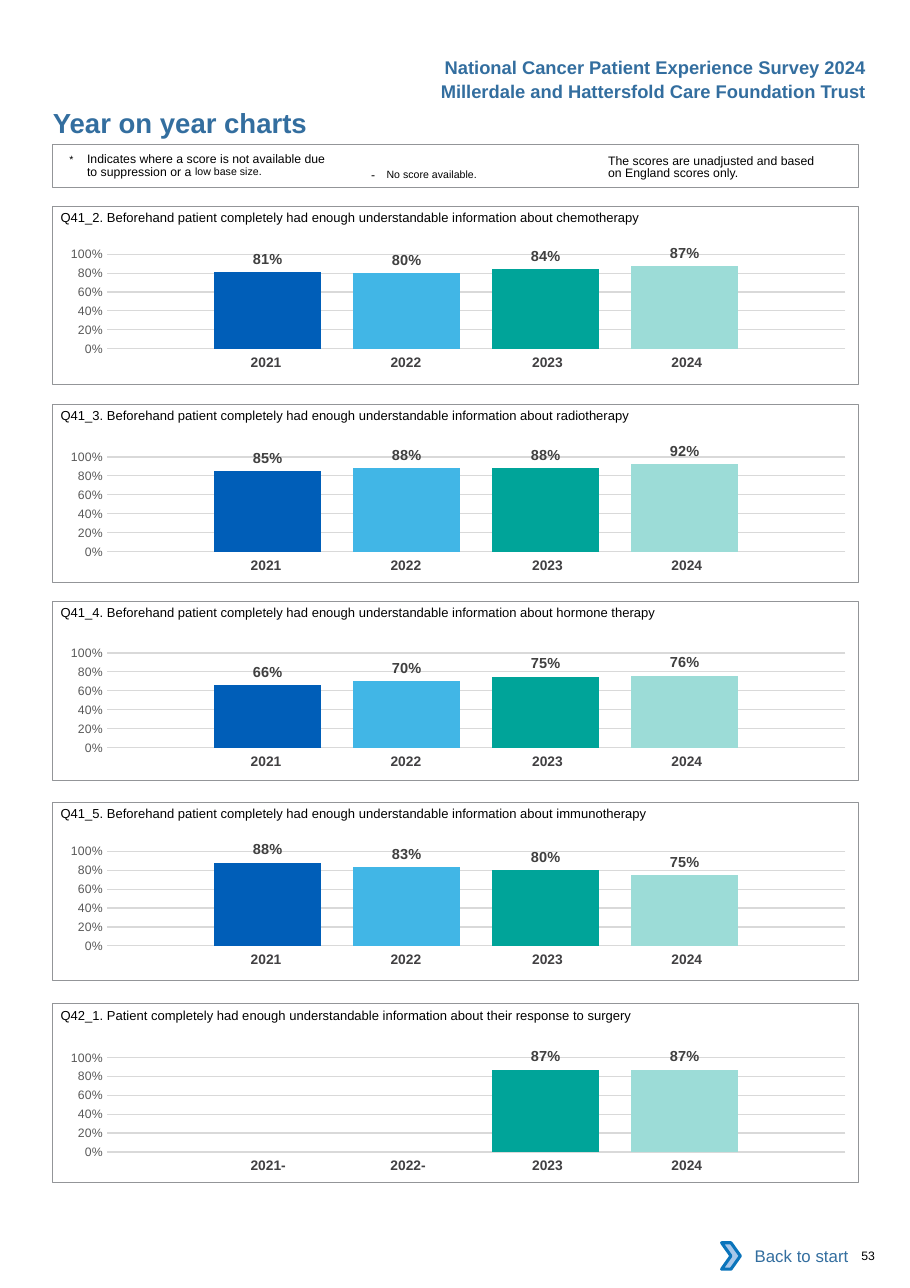
import lxml.etree
import pptx
import pptx.chart.data
import pptx.dml.color
import pptx.enum.chart
import pptx.enum.shapes
import pptx.enum.text
import pptx.oxml
import pptx.oxml.ns
import pptx.util

Pt = pptx.util.Pt
Inches = pptx.util.Inches
Rgb = pptx.dml.color.RGBColor.from_string
qn = pptx.oxml.ns.qn
ALIGN = pptx.enum.text.PP_ALIGN
SHAPE = pptx.enum.shapes.MSO_SHAPE

THEME = {
    "font": "Arial", "chart font": "Calibri",
    "blue": "336E9F", "black": "000000", "white": "FFFFFF", "frame": "939598",
    "year": "414042", "label": "404040", "axis": "595959", "grid": "D9D9D9",
    "arrow": "A8C7E9", "arrow line": "0A74BB",
    "bars": ["005EB8", "41B6E6", "00A499", "9CDCD7"],
    "heading": 18, "header": 12, "link": 11, "year size": 9,
    "label size": 9.5, "question": 8.5, "small": 8, "raised": 12,
}
PLAIN_TABLE = "{2D5ABB26-0587-4C30-8999-92F81FD0307C}"

deck = pptx.Presentation()
deck.slide_width, deck.slide_height = Inches(8.26), Inches(11.69)
page = deck.slides.add_slide(deck.slide_layouts[6])


def area(left, top, width, height):
    """Turn hundredths of the page's width and height into lengths."""
    across, down = deck.slide_width / 100, deck.slide_height / 100
    return round(left * across), round(top * down), round(width * across), round(height * down)


def write(box, spans, size, color="black", bold=False, align=ALIGN.LEFT, insets=(0, 0, 0, 0)):
    """Fill a shape with one paragraph; a span is (text, baseline shift in percent)."""
    frame = box.text_frame
    frame.word_wrap = True
    frame.margin_left, frame.margin_top, frame.margin_right, frame.margin_bottom = map(Inches, insets)
    para = frame.paragraphs[0]
    para.alignment = align
    para.font.name, para.font.bold = THEME["font"], bold
    para.font.size = Pt(THEME[size])
    para.font.color.rgb = Rgb(THEME[color])
    for text, shift in spans:
        span = para.add_run()
        span.text = text
        if shift:
            span.font.size = Pt(THEME["raised"])
            span.font._element.set("baseline", str(shift * 1000))
    return para


# Header
boxed = (0.1, 0.05, 0.1, 0.05)
for top, line in [(3.93, "National Cancer Patient Experience Survey 2024"),
                  (5.82, "Millerdale and Hattersfold Care Foundation Trust")]:
    box = page.shapes.add_textbox(*area(44.07, top, 52.3, 2.57))
    write(box, [(line, 0)], "header", "blue", True, ALIGN.RIGHT, boxed)
box = page.shapes.add_textbox(*area(5.81, 8.21, 54.48, 2.57))
write(box, [("Year on year charts", 0)], "heading", "blue", True)

# Key to the scores
notes = [
    (area(7.63, 11.8, 29.06, 2.31), (0, 0.03, 0, 0), 8.1,
     [("*\t", 3), ("Indicates where a score is not available due to suppression or a ", 0),
      ("low base size.", 7)]),
    (area(39.59, 12.06, 22.15, 2.05), boxed, None,
     [("-\t", 0), ("No score available.", 3)]),
    (area(66.83, 11.8, 24.33, 2.31), (0, 0.03, 0, 0), 8.1,
     [("The scores are unadjusted and based on England scores only.", 0)]),
]
for place, insets, spacing, spans in notes:
    para = write(page.shapes.add_textbox(*place), spans, "small", insets=insets)
    para.space_before = Pt(2.5)
    if spacing:
        para.line_spacing = Pt(spacing)
    if spans[0][0].endswith("\t"):
        hang = Inches(0.16 if spacing else 0.14)
        para._p.get_or_add_pPr().set("marL", str(hang))
        para._p.get_or_add_pPr().set("indent", str(-hang))

# Frames: the key, then one for each question
questions = [
    (16, 18.14, "Q41_2. Beforehand patient completely had enough understandable information about chemotherapy",
     [0.81, 0.8, 0.84, 0.87]),
    (31.39, 33.88, "Q41_3. Beforehand patient completely had enough understandable information about radiotherapy",
     [0.85, 0.88, 0.88, 0.92]),
    (46.71, 49.1, "Q41_4. Beforehand patient completely had enough understandable information about hormone therapy",
     [0.66, 0.7, 0.75, 0.76]),
    (62.28, 64.5, "Q41_5. Beforehand patient completely had enough understandable information about immunotherapy",
     [0.88, 0.83, 0.8, 0.75]),
    (77.93, 80.5, "Q42_1. Patient completely had enough understandable information about their response to surgery",
     [None, None, 0.87, 0.87]),
]
frames = [(11.21, 3.34, 0.75)] + [(question[0], 13.86, 0.5) for question in questions]
for top, height, weight in frames:
    frame = page.shapes.add_shape(SHAPE.RECTANGLE, *area(5.75, top, 88.62, height))
    frame.shadow.inherit = False
    frame.fill.background()
    frame.line.color.rgb = Rgb(THEME["frame"])
    frame.line.width = Pt(weight)

# Question panels
for panel_top, chart_top, question, scores in questions:
    box = page.shapes.add_textbox(*area(6.66, panel_top - 0.51, 87.17, 2.05))
    write(box, [(question, 0)], "question", insets=(0, 0.09, 0, 0))

    data = pptx.chart.data.CategoryChartData(number_format="0%")
    data.categories = ["1"]
    for number, score in enumerate(scores, 1):
        data.add_series(f"Series {number}", [score])
    chart = page.shapes.add_chart(pptx.enum.chart.XL_CHART_TYPE.COLUMN_CLUSTERED,
                                  *area(4.72, chart_top, 88.62, 11.04), data).chart
    chart.has_legend = chart.has_title = False
    chart.font.name, chart.font.size = THEME["chart font"], Pt(10)
    chart.category_axis.visible = False

    axis = chart.value_axis
    axis.minimum_scale, axis.maximum_scale, axis.major_unit = 0, 1, 0.2
    axis.major_tick_mark = pptx.enum.chart.XL_TICK_MARK.NONE
    axis.format.line.fill.background()
    axis.major_gridlines.format.line.color.rgb = Rgb(THEME["grid"])
    axis.major_gridlines.format.line.width = Pt(0.75)
    ticks = axis.tick_labels
    ticks.number_format, ticks.number_format_is_linked = "0%", False
    ticks.font.name, ticks.font.size = THEME["font"], Pt(THEME["small"])
    ticks.font.color.rgb = Rgb(THEME["axis"])

    plot = chart.plots[0]
    plot.gap_width, plot.overlap, plot.vary_by_categories = 200, -30, False
    for series, color in zip(plot.series, THEME["bars"]):
        series.format.fill.solid()
        series.format.fill.fore_color.rgb = Rgb(color)
        labels = series.data_labels
        labels.show_value = True
        labels.position = pptx.enum.chart.XL_LABEL_POSITION.OUTSIDE_END
        labels.number_format, labels.number_format_is_linked = "0%", False
        labels.font.name, labels.font.bold = THEME["font"], True
        labels.font.size = Pt(THEME["label size"])
        labels.font.color.rgb = Rgb(THEME["label"])

    plot_area = chart._chartSpace.find(".//" + qn("c:plotArea"))
    for old in plot_area.findall(qn("c:layout")):
        plot_area.remove(old)
    layout = lxml.etree.Element(qn("c:layout"))
    manual = lxml.etree.SubElement(layout, qn("c:manualLayout"))
    for tag, value in [("layoutTarget", "inner"), ("xMode", "edge"), ("yMode", "edge"),
                       ("x", "0.08"), ("y", "0.145"), ("w", "0.915"), ("h", "0.666")]:
        lxml.etree.SubElement(manual, qn("c:" + tag)).set("val", value)
    plot_area.insert(0, layout)

    years = page.shapes.add_table(1, 4, *area(20.94, chart_top + 9, 62.35, 2.31)).table
    years.first_row = years.horz_banding = False
    years._tbl.tblPr.find(qn("a:tableStyleId")).text = PLAIN_TABLE
    for index, (score, width, right) in enumerate(zip(scores, [1.27, 1.27, 1.34, 1.27], [0, 0, 0.04, 0.12])):
        years.columns[index].width = Inches(width)
        cell = years.cell(0, index)
        cell.fill.background()
        cell.margin_left = Inches(0.1 if score else 0.14)
        cell.margin_right = Inches(right)
        para = cell.text_frame.paragraphs[0]
        para.text = f"{2021 + index}" + ("" if score else "-")
        para.alignment = ALIGN.CENTER
        para.font.name, para.font.size, para.font.bold = THEME["font"], Pt(THEME["year size"]), True
        para.font.color.rgb = Rgb(THEME["year"])

# Footer
back = page.shapes.add_shape(SHAPE.RECTANGLE, *area(80.15, 95.72, 14.29, 3.59))
arrow = page.shapes.add_shape(SHAPE.CHEVRON, *area(79.3, 96.49, 2.06, 2.05))
for shape, color in [(back, "white"), (arrow, "arrow")]:
    shape.shadow.inherit = False
    shape.fill.solid()
    shape.fill.fore_color.rgb = Rgb(THEME[color])
back.line.fill.background()
back.text_frame.vertical_anchor = pptx.enum.text.MSO_ANCHOR.MIDDLE
write(back, [("Back to start", 0)], "link", "blue", align=ALIGN.RIGHT, insets=boxed)
arrow.line.color.rgb = Rgb(THEME["arrow line"])
arrow.line.width = Pt(2)
box = page.shapes.add_textbox(*area(93.46, 96.92, 6.17, 1.11))
write(box, [("53", 0)], "small", insets=(0.1, 0, 0, 0))

deck.save("out.pptx")
